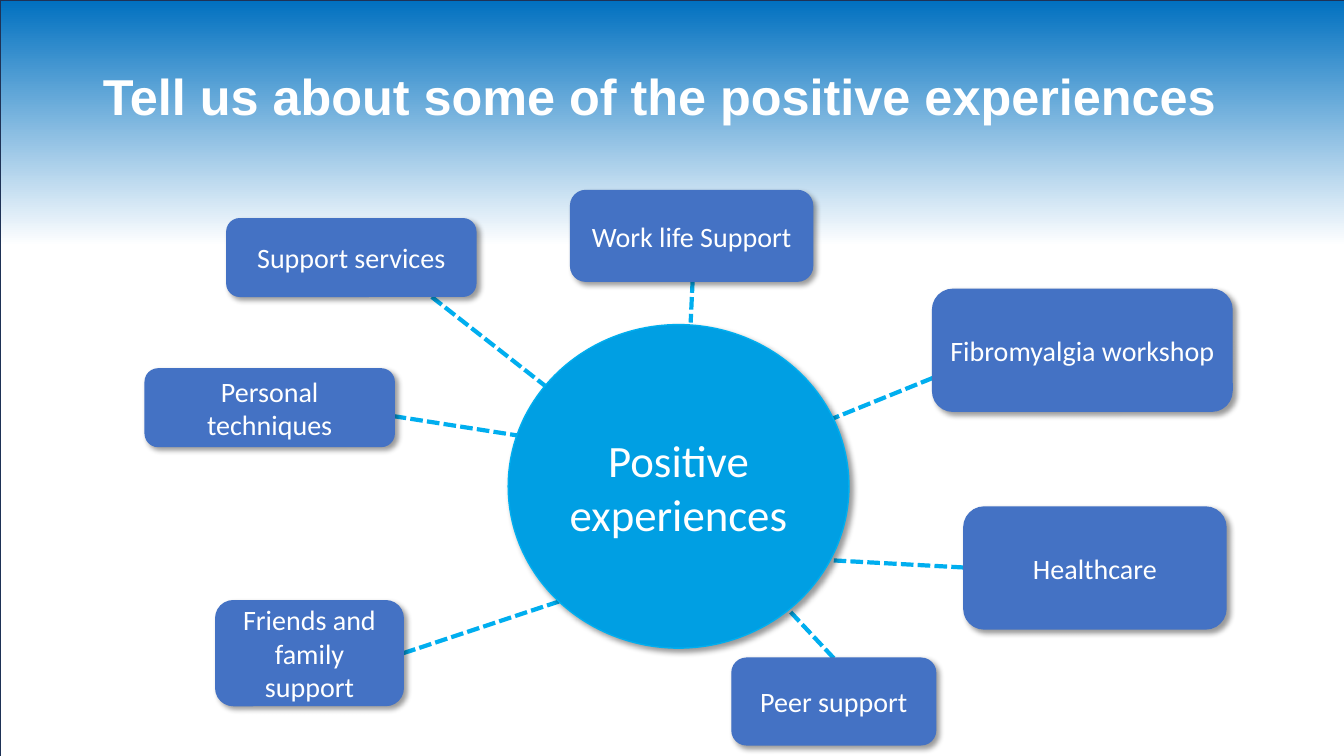
from dataclasses import dataclass

from pptx import Presentation
from pptx.dml.color import RGBColor as Rgb
from pptx.enum.dml import MSO_LINE_DASH_STYLE as Dash
from pptx.enum.shapes import MSO_CONNECTOR_TYPE as Connector, MSO_SHAPE as Shape
from pptx.enum.text import MSO_ANCHOR as Anchor, PP_ALIGN as Align
from pptx.oxml import parse_xml
from pptx.oxml.ns import nsdecls
from pptx.util import Pt

PX = 9144


@dataclass(frozen=True)
class Theme:
    """Colours, fonts and type sizes of the slide."""
    sky: str = "0070C0"
    white: str = "FFFFFF"
    frame: str = "1E3256"
    topic: str = "4472C4"
    hub: str = "009FE3"
    link: str = "00AEEF"
    title_font: str = "Arial"
    body_font: str = "Calibri"
    title_size: int = 36
    hub_size: int = 32
    topic_size: int = 20


THEME = Theme()
SLIDE_SIZE = (1333, 750)
BACKDROP_BOX = (0, 0, 1369, 786)
TITLE_BOX = (92, 26, 1150, 145)
HUB_BOX = (504, 322, 338, 321)
TOPICS = [
    ("Friends and family support", (214, 596, 186, 104), (400, 648), (665, 560)),
    ("Healthcare", (956, 503, 260, 121), (956, 563), (827, 556)),
    ("Work life Support", (566, 189, 240, 90), (687, 278), (685, 320)),
    ("Fibromyalgia workshop", (925, 287, 297, 121), (925, 375), (824, 416)),
    ("Peer support", (726, 653, 202, 86), (827, 653), (769, 591)),
    ("Personal techniques", (144, 366, 247, 77), (308, 400), (513, 432)),
    ("Support services", (225, 217, 247, 77), (402, 274), (546, 387)),
]


def emu(lengths):
    """Turn px lengths into EMU."""
    return [length * PX for length in lengths]


def add_effects(shape, effects=""):
    """Give a shape exactly the listed effects."""
    shape._element.spPr.append(
        parse_xml(f'<a:effectLst {nsdecls("a")}>{effects}</a:effectLst>'))


def add_drop_shadow(shape):
    """Cast a soft black shadow down and to the right."""
    add_effects(shape, (
        f'<a:outerShdw blurRad="{Pt(4)}" dist="{Pt(3)}" dir="2700000" algn="tl" rotWithShape="0">'
        '<a:srgbClr val="000000"><a:alpha val="40000"/></a:srgbClr></a:outerShdw>'))


def write(shape, text, font, size, align, bold=False):
    """Write one white, vertically centred paragraph into a shape."""
    frame = shape.text_frame
    frame.word_wrap = True
    frame.vertical_anchor = Anchor.MIDDLE
    paragraph = frame.paragraphs[0]
    paragraph.alignment = align
    run = paragraph.add_run()
    run.text = text
    run.font.name = font
    run.font.size = Pt(size)
    run.font.bold = bold
    run.font.color.rgb = Rgb.from_string(THEME.white)
    return paragraph


def add_backdrop(slide, box):
    """Fade the slide from blue at the top to white, behind all else."""
    shape = slide.shapes.add_shape(Shape.RECTANGLE, *emu(box))
    shape.shadow.inherit = False
    shape.fill.gradient()
    shape.fill.gradient_angle = 270
    stops = ((0, THEME.sky), (0.31, THEME.white))
    for stop, (position, color) in zip(shape.fill.gradient_stops, stops):
        stop.position = position
        stop.color.rgb = Rgb.from_string(color)
    shape.line.color.rgb = Rgb.from_string(THEME.frame)
    shape.line.width = Pt(1)
    slide.shapes._spTree.insert(2, shape._element)


def add_title(slide, box, text):
    """Place and fill the title placeholder."""
    title = slide.shapes.title
    title.left, title.top, title.width, title.height = emu(box)
    paragraph = write(title, text, THEME.title_font, THEME.title_size, Align.LEFT, bold=True)
    paragraph.line_spacing = 0.9


def add_link(slide, start, end):
    """Draw a dashed line between a topic and the hub."""
    link = slide.shapes.add_connector(Connector.STRAIGHT, *emu(start + end))
    link.line.color.rgb = Rgb.from_string(THEME.link)
    link.line.width = Pt(3)
    link.line.dash_style = Dash.SQUARE_DOT
    add_effects(link)


def add_bubble(slide, kind, box, text, fill, line, size):
    """Draw a filled, shadowed shape with a centred label."""
    bubble = slide.shapes.add_shape(kind, *emu(box))
    bubble.fill.solid()
    bubble.fill.fore_color.rgb = Rgb.from_string(fill)
    bubble.line.color.rgb = Rgb.from_string(line)
    bubble.line.width = Pt(1)
    add_drop_shadow(bubble)
    write(bubble, text, THEME.body_font, size, Align.CENTER)


def add_mind_map(slide, hub_box, hub_text, topics):
    """Draw the topics around the hub, with their links behind."""
    for _, _, start, end in topics:
        add_link(slide, start, end)
    for text, box, _, _ in topics:
        add_bubble(slide, Shape.ROUNDED_RECTANGLE, box, text,
                   THEME.topic, THEME.topic, THEME.topic_size)
    add_bubble(slide, Shape.OVAL, hub_box, hub_text, THEME.hub, THEME.link, THEME.hub_size)


def main():
    """Build and save the slide."""
    presentation = Presentation()
    presentation.slide_width, presentation.slide_height = emu(SLIDE_SIZE)
    slide = presentation.slides.add_slide(presentation.slide_layouts.get_by_name("Title Only"))
    add_backdrop(slide, BACKDROP_BOX)
    add_title(slide, TITLE_BOX, "Tell us about some of the positive experiences")
    add_mind_map(slide, HUB_BOX, "Positive experiences", TOPICS)
    presentation.save("out.pptx")


if __name__ == "__main__":
    main()
